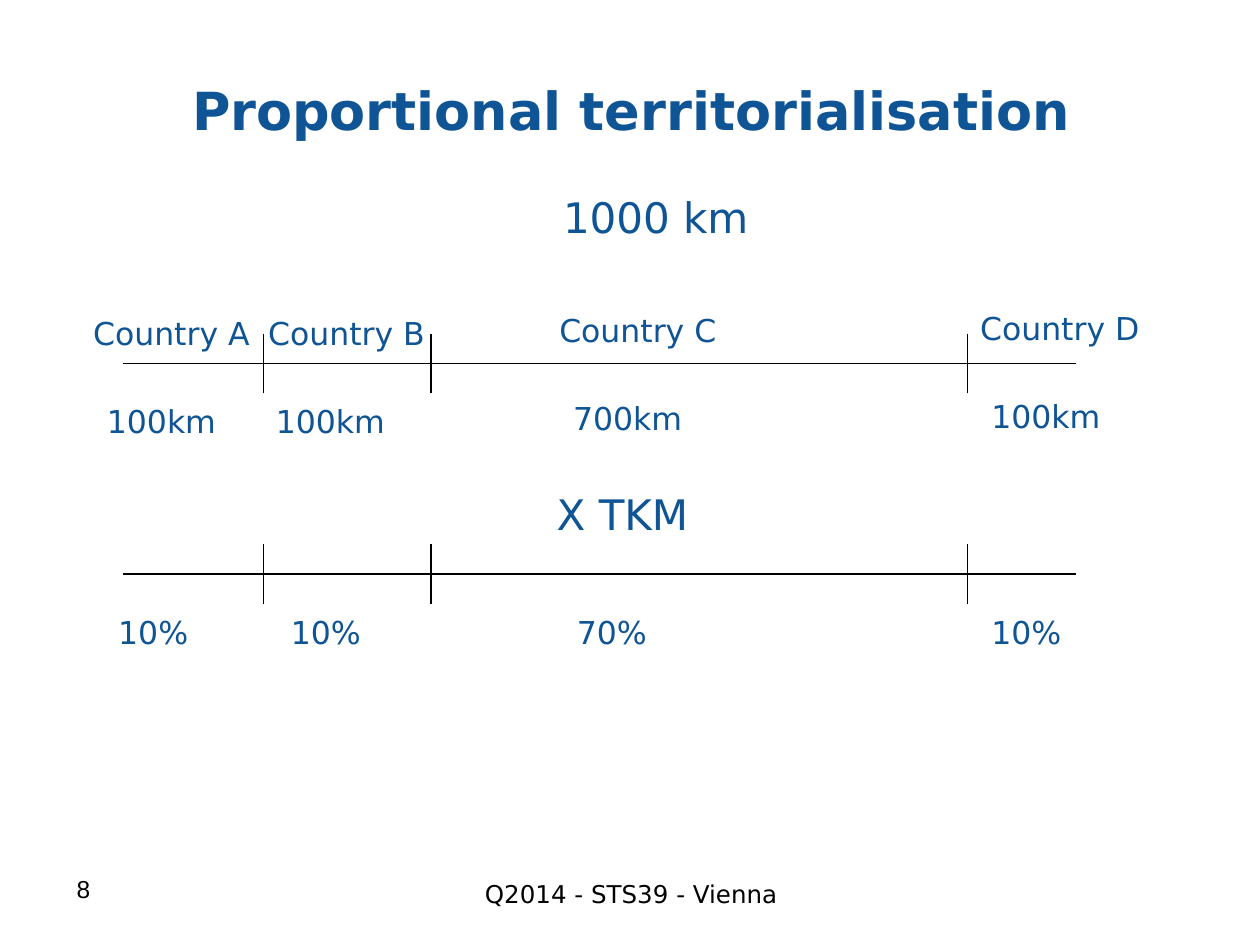
from dataclasses import dataclass

from lxml import etree
from pptx import Presentation
from pptx.dml.color import RGBColor
from pptx.enum.shapes import MSO_CONNECTOR as Connector
from pptx.enum.text import MSO_ANCHOR as Anchor, MSO_AUTO_SIZE as AutoSize, PP_ALIGN as Align
from pptx.oxml.ns import qn
from pptx.util import Inches, Pt


@dataclass(frozen=True)
class Theme:
    """Colours, fonts and sizes of the slide."""
    blue: RGBColor = RGBColor(0x0F, 0x54, 0x94)
    black: RGBColor = RGBColor(0, 0, 0)
    font: str = "DejaVu Sans"
    number_font: str = "Arial"
    title: int = 30
    total: int = 24
    label: int = 18
    footer: int = 14
    line: float = 0.75


THEME = Theme()
BORDERS = (1.11, 2.44, 6.7)
LABEL_WIDTH = 2.28


def write(frame, text, size=THEME.label, color=THEME.blue, font=THEME.font,
          bold=False, align=Align.LEFT, anchor=Anchor.TOP, auto_size=AutoSize.NONE):
    """Put formatted text into a text frame."""
    frame.word_wrap = True
    frame.auto_size = auto_size
    frame.vertical_anchor = anchor
    paragraph = frame.paragraphs[0]
    paragraph.alignment = align
    run = paragraph.add_run()
    run.text = text
    run.font.name = font
    run.font.size = Pt(size)
    run.font.bold = bold
    run.font.color.rgb = color


def add_text(slide, text, left, top, width=LABEL_WIDTH, height=0.4, **style):
    """Add a text box in the given box, in inches."""
    box = slide.shapes.add_textbox(Inches(left), Inches(top), Inches(width), Inches(height))
    write(box.text_frame, text, **style)


def add_line(slide, x1, y1, x2, y2):
    """Add a thin black line without shadow."""
    line = slide.shapes.add_connector(
        Connector.STRAIGHT, Inches(x1), Inches(y1), Inches(x2), Inches(y2))
    line.line.color.rgb = THEME.black
    line.line.width = Pt(THEME.line)
    etree.SubElement(line._element.spPr, qn("a:effectLst"))


def add_title(slide, left, top, width, height):
    """Place and format the title."""
    title = slide.shapes.title
    title.left, title.top = Inches(left), Inches(top)
    title.width, title.height = Inches(width), Inches(height)
    write(title.text_frame, "Proportional territorialisation", size=THEME.title,
          bold=True, align=Align.CENTER, anchor=Anchor.MIDDLE)


def add_route(slide, left, top, width, height, total, labels):
    """Draw a route cut at the country borders, with its total and labels."""
    middle = top + height / 2
    add_line(slide, left, middle, left + width, middle)
    for border in BORDERS:
        add_line(slide, left + border, top, left + border, top + height)
    total_text, total_x, total_y = total
    add_text(slide, total_text, left + total_x, top + total_y, height=0.5,
             size=THEME.total, auto_size=AutoSize.SHAPE_TO_FIT_TEXT)
    for text, x, y, label_width in labels:
        add_text(slide, text, left + x, top + y, label_width,
                 auto_size=AutoSize.SHAPE_TO_FIT_TEXT)


def add_footer(slide, left, top, width, height):
    """Place the page number and the centred event name."""
    add_text(slide, "8", left, top, 2.33, height, size=THEME.footer,
             color=THEME.black, font=THEME.number_font)
    add_text(slide, "Q2014 - STS39 - Vienna", left + (width - 3.17) / 2, top + 0.04,
             3.17, height, size=THEME.footer, color=THEME.black, align=Align.CENTER)


def main():
    """Build and save the slide."""
    deck = Presentation()
    deck.slide_width, deck.slide_height = Inches(10), Inches(7.5)
    slide = deck.slides.add_slide(deck.slide_layouts[5])
    add_title(slide, 0.51, 0.36, 9, 1.02)
    distances = (
        ("Country A", -0.34, -0.21, LABEL_WIDTH),
        ("Country B", 1.05, -0.21, LABEL_WIDTH),
        ("Country C", 3.36, -0.23, LABEL_WIDTH),
        ("Country D", 6.7, -0.25, LABEL_WIDTH),
        ("100km", -0.23, 0.49, LABEL_WIDTH),
        ("100km", 1.11, 0.49, LABEL_WIDTH),
        ("700km", 3.47, 0.47, LABEL_WIDTH),
        ("100km", 6.79, 0.45, 2.2),
    )
    shares = (
        ("10%", -0.14, 0.5, 0.94),
        ("10%", 1.23, 0.5, 0.94),
        ("70%", 3.5, 0.5, LABEL_WIDTH),
        ("10%", 6.79, 0.5, 2.2),
    )
    add_route(slide, 0.98, 2.65, 7.56, 0.47, ("1000 km", 3.39, -1.18), distances)
    add_route(slide, 0.98, 4.32, 7.56, 0.47, ("X TKM", 3.34, -0.49), shares)
    add_footer(slide, 0.51, 6.89, 9, 0.52)
    deck.save("out.pptx")


if __name__ == "__main__":
    main()
